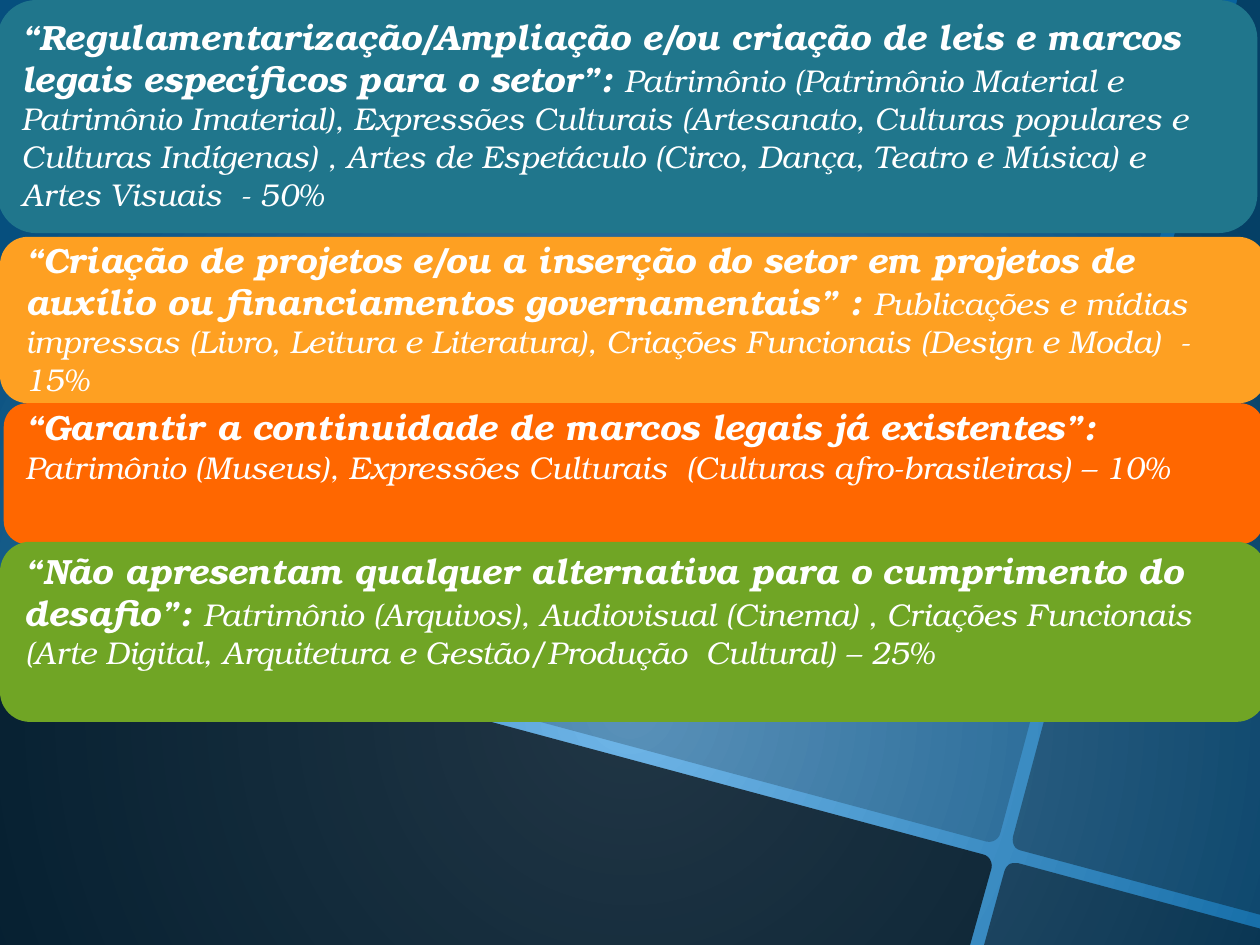
from lxml import etree
from pptx import Presentation
from pptx.dml.color import RGBColor
from pptx.enum.shapes import MSO_SHAPE
from pptx.enum.text import MSO_AUTO_SIZE
from pptx.oxml.ns import qn
from pptx.util import Inches, Pt

ROUNDED = MSO_SHAPE.ROUNDED_RECTANGLE
GROW = MSO_AUTO_SIZE.SHAPE_TO_FIT_TEXT
FONT = "TeX Gyre Bonum"
COLORS = {
    "glow": "70B6E8",
    "edge": "08639E",
    "pane": "000000",
    "teal": "20768C",
    "amber": "FEA022",
    "orange": "FF6700",
    "green": "70A525",
    "text": "FFFFFF",
}


def color(name):
    return RGBColor.from_string(COLORS[name])


def curve(*points, steps=6):
    weights = (1, 3, 3, 1)
    return [
        tuple(
            sum(w * (1 - t) ** (3 - i) * t**i * point[axis]
                for i, (w, point) in enumerate(zip(weights, points)))
            for axis in (0, 1)
        )
        for t in (step / steps for step in range(steps + 1))
    ]


deck = Presentation()
deck.slide_width, deck.slide_height = Inches(10), Inches(7.5)
page = deck.slides.add_slide(deck.slide_layouts[6])

backdrop = page.background.fill
backdrop.gradient()
for stop, name in zip(backdrop.gradient_stops, ("glow", "edge")):
    stop.color.rgb = color(name)
gradient = page._element.find(".//" + qn("a:gradFill"))
linear = gradient.find(qn("a:lin"))
radial = etree.Element(qn("a:path"), {"path": "circle"})
etree.SubElement(radial, qn("a:fillToRect"), l="50000", t="50000", r="50000", b="0")
gradient.replace(linear, radial)

panes = [
    (20, [(0, 0), (9.71, 0),
          *curve((7.94, 6.61), (7.93, 6.66), (7.88, 6.69), (7.83, 6.68)), (0, 4.58)]),
    (70, [(0, 4.68), *curve((7.8, 6.78), (7.85, 6.79), (7.88, 6.84), (7.87, 6.89)),
          (7.7, 7.5), (0, 7.5)]),
    (50, [(8.08, 6.85), (10, 7.37), (10, 7.5), (7.81, 7.5),
          *curve((7.97, 6.92), (7.98, 6.88), (8.01, 6.85), (8.04, 6.85))]),
    (35, [(9.82, 0), (10, 0), (10, 7.26),
          *curve((8.1, 6.75), (8.05, 6.74), (8.03, 6.69), (8.04, 6.64))]),
]
for opacity, outline in panes:
    start, *rest = [(Inches(x), Inches(y)) for x, y in outline]
    builder = page.shapes.build_freeform(*start)
    builder.add_line_segments(rest, close=True)
    pane = builder.convert_to_shape()
    pane.shadow.inherit = False
    pane.line.fill.background()
    pane.fill.solid()
    pane.fill.fore_color.rgb = color("pane")
    tint = pane._element.spPr.find(qn("a:solidFill"))[0]
    etree.SubElement(tint, qn("a:alpha"), val=str(opacity * 1000))

bands = [
    ("teal", (-0.02, 0, 10, 1.85), (0.07, 0.07, 9.78, 1.68),
     "“Regulamentarização/Ampliação e/ou criação de leis e marcos legais "
     "específicos para o setor”: ",
     "Patrimônio (Patrimônio Material e Patrimônio Imaterial), Expressões Culturais "
     "(Artesanato, Culturas populares e Culturas Indígenas) , Artes de Espetáculo "
     "(Circo, Dança, Teatro e Música) e Artes Visuais  - 50%"),
    ("amber", (0, 1.88, 10.05, 1.32), (0.1, 1.84, 9.78, 1.08),
     "“Criação de projetos e/ou a inserção do setor em projetos de auxílio ou "
     "financiamentos governamentais” : ",
     "Publicações e mídias impressas (Livro, Leitura e Literatura), Criações "
     "Funcionais (Design e Moda)  - 15%"),
    ("orange", (0.03, 3.2, 10, 1.12), (0.1, 3.17, 9.78, 0.74),
     "“Garantir a continuidade de marcos legais já existentes”:  ",
     "Patrimônio (Museus), Expressões Culturais  (Culturas afro-brasileiras) – 10%"),
    ("green", (0, 4.3, 10.05, 1.43), (0.1, 4.31, 9.76, 1.35),
     "“Não apresentam qualquer alternativa para o cumprimento do desafio”: ",
     "Patrimônio (Arquivos), Audiovisual (Cinema) , Criações Funcionais (Arte Digital, "
     "Arquitetura e Gestão/Produção  Cultural) – 25%"),
]
for name, band_frame, text_frame, heading, detail in bands:
    band = page.shapes.add_shape(ROUNDED, *map(Inches, band_frame))
    band.shadow.inherit = False
    band.fill.solid()
    band.fill.fore_color.rgb = color(name)
    band.line.fill.background()

    box = page.shapes.add_textbox(*map(Inches, text_frame))
    box.text_frame.word_wrap = True
    box.text_frame.auto_size = GROW
    para = box.text_frame.paragraphs[0]
    para.font.name = FONT
    para.font.italic = True
    para.font.color.rgb = color("text")
    for text, size, bold in ((heading, 20, True), (detail, 18, False)):
        span = para.add_run()
        span.text = text
        span.font.size = Pt(size)
        span.font.bold = bold

deck.save("out.pptx")
